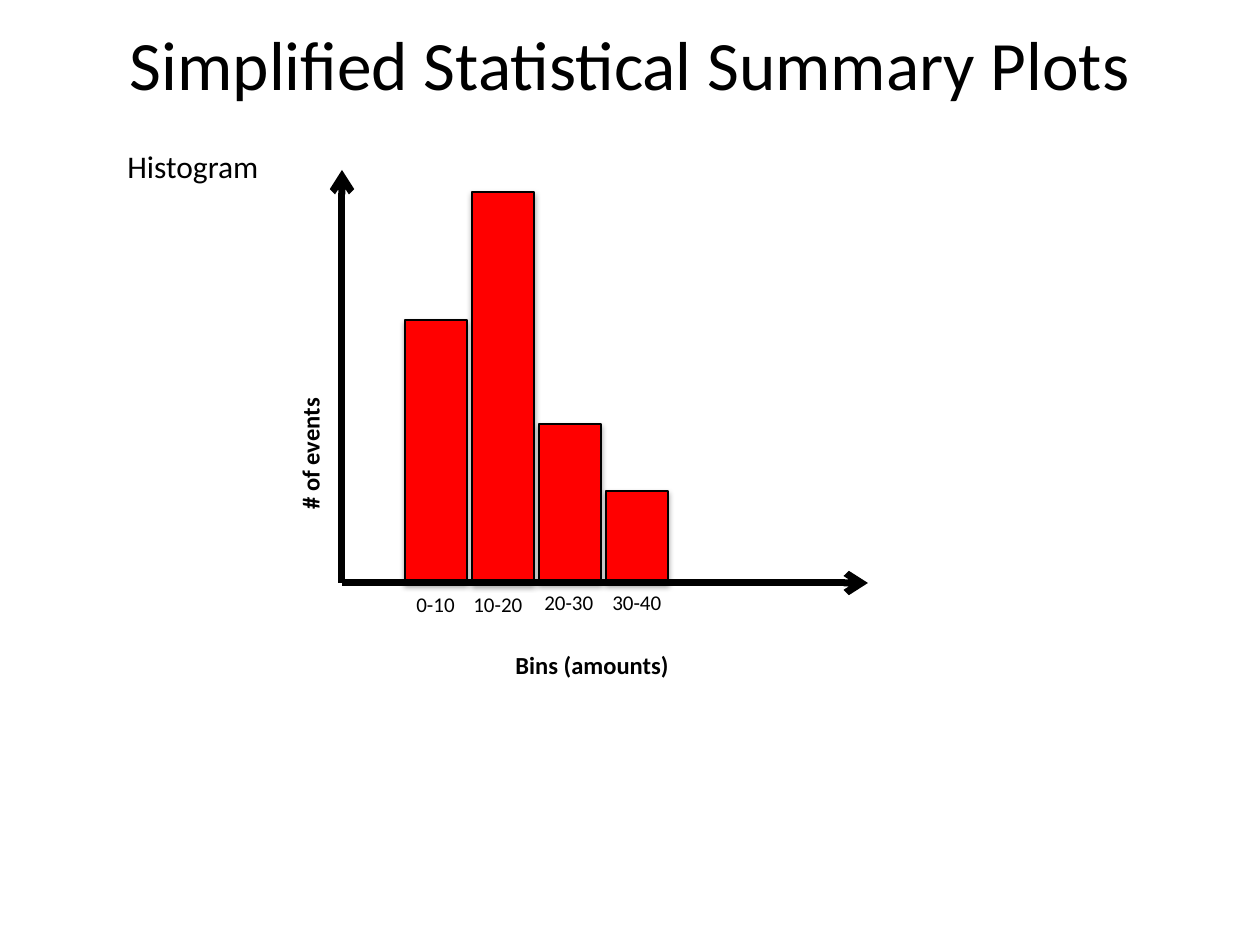
from lxml import etree
from pptx import Presentation
from pptx.dml.color import RGBColor
from pptx.enum.shapes import MSO_CONNECTOR, MSO_SHAPE
from pptx.enum.text import MSO_ANCHOR, MSO_AUTO_SIZE, PP_ALIGN
from pptx.oxml import parse_xml
from pptx.oxml.ns import nsdecls, qn
from pptx.util import Pt

SCALE = 914400 / 126
BLACK = RGBColor(0, 0, 0)
RED = RGBColor(255, 0, 0)
RECTANGLE = MSO_SHAPE.RECTANGLE
STRAIGHT = MSO_CONNECTOR.STRAIGHT
MIDDLE = MSO_ANCHOR.MIDDLE
CENTER = PP_ALIGN.CENTER
NO_AUTOFIT = MSO_AUTO_SIZE.NONE
GROW = MSO_AUTO_SIZE.SHAPE_TO_FIT_TEXT
SHADOW = (
    f'<a:effectLst {nsdecls("a")}>'
    '<a:outerShdw blurRad="40000" dist="23000" dir="5400000" rotWithShape="0">'
    '<a:srgbClr val="000000"><a:alpha val="35000"/></a:srgbClr>'
    '</a:outerShdw></a:effectLst>'
)


def emu(*lengths):
    return [round(length * SCALE) for length in lengths]


def add_label(text, box, size, bold=False, wrap=False):
    label = slide.shapes.add_textbox(*emu(*box))
    frame = label.text_frame
    frame.word_wrap = wrap
    frame.auto_size = GROW
    paragraph = frame.paragraphs[0]
    paragraph.text = text
    paragraph.font.name = "Calibri"
    paragraph.font.size = Pt(size)
    paragraph.font.bold = bold
    paragraph.font.color.rgb = BLACK
    return label


presentation = Presentation()
presentation.slide_width, presentation.slide_height = emu(1260, 945)
slide = presentation.slides.add_slide(presentation.slide_layouts[5])

title = slide.shapes.title
title.left, title.top, title.width, title.height = emu(63, -16, 1134, 158)
title.text_frame.text = "Simplified Statistical Summary Plots"
title.text_frame.auto_size = NO_AUTOFIT
title.text_frame.vertical_anchor = MIDDLE
paragraph = title.text_frame.paragraphs[0]
paragraph.alignment = CENTER
paragraph.font.name = "Calibri"
paragraph.font.size = Pt(39.6)
paragraph.font.color.rgb = BLACK

baseline = 583
bar_left, bar_step, bar_width = 405, 67, 62
for index, height in enumerate([263, 391, 159, 92]):
    left = bar_left + index * bar_step
    bar = slide.shapes.add_shape(
        RECTANGLE, *emu(left, baseline - height, bar_width, height)
    )
    bar.fill.solid()
    bar.fill.fore_color.rgb = RED
    bar.line.color.rgb = BLACK
    bar.line.width = Pt(0.75)
    bar._element.spPr.append(parse_xml(SHADOW))

add_label("Histogram", (115, 141, 539, 50), 18, wrap=True)

origin_left = 342
for tip_left, tip_top in [(origin_left, 170), (868, baseline)]:
    axis = slide.shapes.add_connector(
        STRAIGHT, *emu(tip_left, tip_top, origin_left, baseline)
    )
    axis.line.color.rgb = BLACK
    axis.line.width = Pt(4)
    etree.SubElement(axis.line._get_or_add_ln(), qn("a:headEnd"), type="arrow")
    etree.SubElement(axis._element.spPr, qn("a:effectLst"))

add_label("Bins (amounts)", (503, 644, 180, 43), 14, bold=True)
events_label = add_label("# of events", (241, 431, 139, 43), 14, bold=True)
events_label.rotation = 270

for text, left, top, width in [
    ("0-10", 404, 585, 64),
    ("10-20", 461, 585, 74),
    ("20-30", 532, 583, 74),
    ("30-40", 600, 583, 74),
]:
    add_label(text, (left, top, width, 38), 12)

presentation.save("out.pptx")
